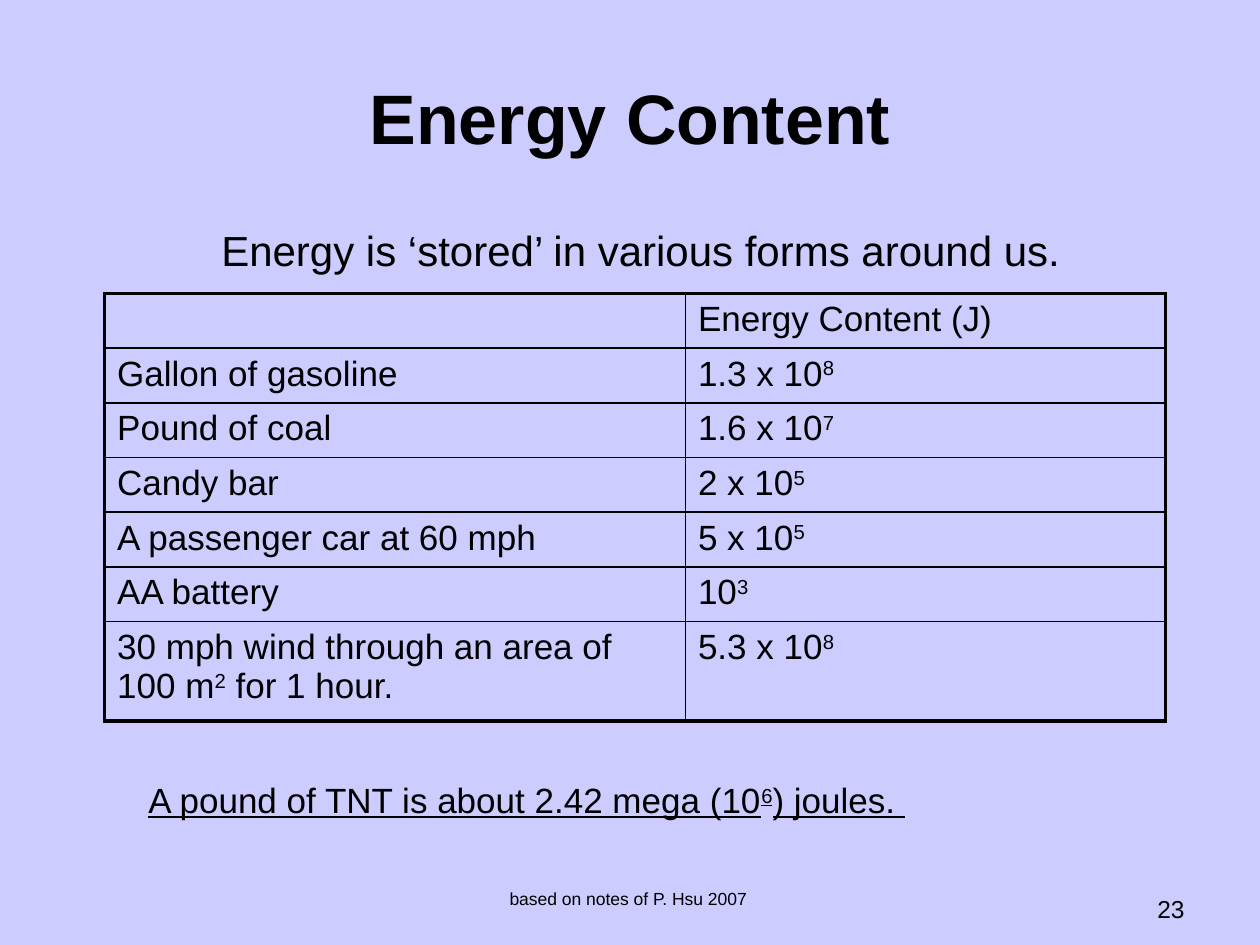
from lxml import etree
from pptx import Presentation
from pptx import util as u
from pptx.dml.color import RGBColor
from pptx.enum import text as t
from pptx.oxml import ns

COLORS = {"background": "CCCCFF", "ink": "000000"}
FONT = "Arial"
WIDTH, HEIGHT = 10, 7.5
ROWS = [
    ("", "Energy Content (J)"),
    ("Gallon of gasoline", "1.3 x 10^8"),
    ("Pound of coal", "1.6 x 10^7"),
    ("Candy bar", "2 x 10^5"),
    ("A passenger car at 60 mph", "5 x 10^5"),
    ("AA battery", "10^3"),
    ("30 mph wind through an area of 100 m^2^ for 1 hour.", "5.3 x 10^8"),
]


def place(shape, box):
    shape.left, shape.top, shape.width, shape.height = map(u.Inches, box)


def write(frame, content, size, bold=False, underline=None, align=t.PP_ALIGN.LEFT):
    """Fill the frame with one paragraph; text between carets is superscript."""
    paragraph = frame.paragraphs[0]
    paragraph.alignment = align
    for index, part in enumerate(content.split("^")):
        run = paragraph.add_run()
        run.text = part
        font = run.font
        font.name, font.size, font.bold, font.underline = FONT, u.Pt(size), bold, underline
        font.color.rgb = RGBColor.from_string(COLORS["ink"])
        if index % 2:
            run._r.get_or_add_rPr().set("baseline", "30000")


def add_title(slide, box):
    title = slide.shapes.title
    place(title, box)
    title.text_frame.vertical_anchor = t.MSO_ANCHOR.MIDDLE
    write(title.text_frame, "Energy Content", 40, bold=True, align=t.PP_ALIGN.CENTER)


def add_lead(slide, box):
    body = slide.placeholders[1]
    place(body, box)
    frame = body.text_frame
    frame.auto_size = t.MSO_AUTO_SIZE.NONE
    frame.vertical_anchor = t.MSO_ANCHOR.BOTTOM
    frame.margin_bottom = u.Inches(0.22)
    write(frame, "Energy is ‘stored’ in various forms around us.", 24, align=t.PP_ALIGN.CENTER)
    properties = frame.paragraphs[0]._p.get_or_add_pPr()
    properties.set("marL", "0")
    properties.set("indent", "0")
    etree.SubElement(properties, ns.qn("a:buNone"))


def add_note(slide, box, content, size, **style):
    frame = slide.shapes.add_textbox(*map(u.Inches, box)).text_frame
    frame.word_wrap = True
    write(frame, content, size, **style)


def set_borders(cell, outer_sides):
    """Draw all four cell borders, heavier on the outer sides."""
    properties = cell._tc.get_or_add_tcPr()
    for index, side in enumerate("LRTB"):
        line = etree.Element(ns.qn(f"a:ln{side}"))
        line.set("w", str(u.Pt(2.25 if side in outer_sides else 1)))
        fill = etree.SubElement(line, ns.qn("a:solidFill"))
        etree.SubElement(fill, ns.qn("a:srgbClr")).set("val", COLORS["ink"])
        properties.insert(index, line)


def add_energy_table(slide, box, column_share=0.5475, row_height=0.43):
    left, top, width, height = box
    last_row = len(ROWS) - 1
    table = slide.shapes.add_table(len(ROWS), 2, *map(u.Inches, box)).table
    table.first_row = table.horz_banding = False
    for column, share in zip(table.columns, (column_share, 1 - column_share)):
        column.width = u.Inches(width * share)
    for r, values in enumerate(ROWS):
        table.rows[r].height = u.Inches(
            height - last_row * row_height if r == last_row else row_height)
        for c, value in enumerate(values):
            cell = table.cell(r, c)
            cell.fill.background()
            write(cell.text_frame, value, 20)
            outer_sides = "LR"[c] + {0: "T", last_row: "B"}.get(r, "")
            set_borders(cell, outer_sides)


def main():
    presentation = Presentation()
    presentation.slide_width, presentation.slide_height = u.Inches(WIDTH), u.Inches(HEIGHT)
    slide = presentation.slides.add_slide(presentation.slide_layouts[1])
    background = slide.background.fill
    background.solid()
    background.fore_color.rgb = RGBColor.from_string(COLORS["background"])

    add_note(slide, (3.4, 7, 3.17, 0.37), "based on notes of P. Hsu 2007", 10,
             align=t.PP_ALIGN.CENTER)
    add_title(slide, (0.5, 0.3, 0.9 * WIDTH, HEIGHT / 6))
    add_energy_table(slide, (0.83, 2.33, 8.42, 3.37))
    add_note(slide, (7.17, 7.05, 2.33, 0.3), "23", 14, align=t.PP_ALIGN.RIGHT)
    add_lead(slide, (0.5, 1.33, 9.17, 1.07))
    add_note(slide, (1.08, 6.13, 8.17, 1.11),
             "A pound of TNT is about 2.42 mega (10^6^) joules. ", 20, underline=True)
    presentation.save("out.pptx")


if __name__ == "__main__":
    main()
